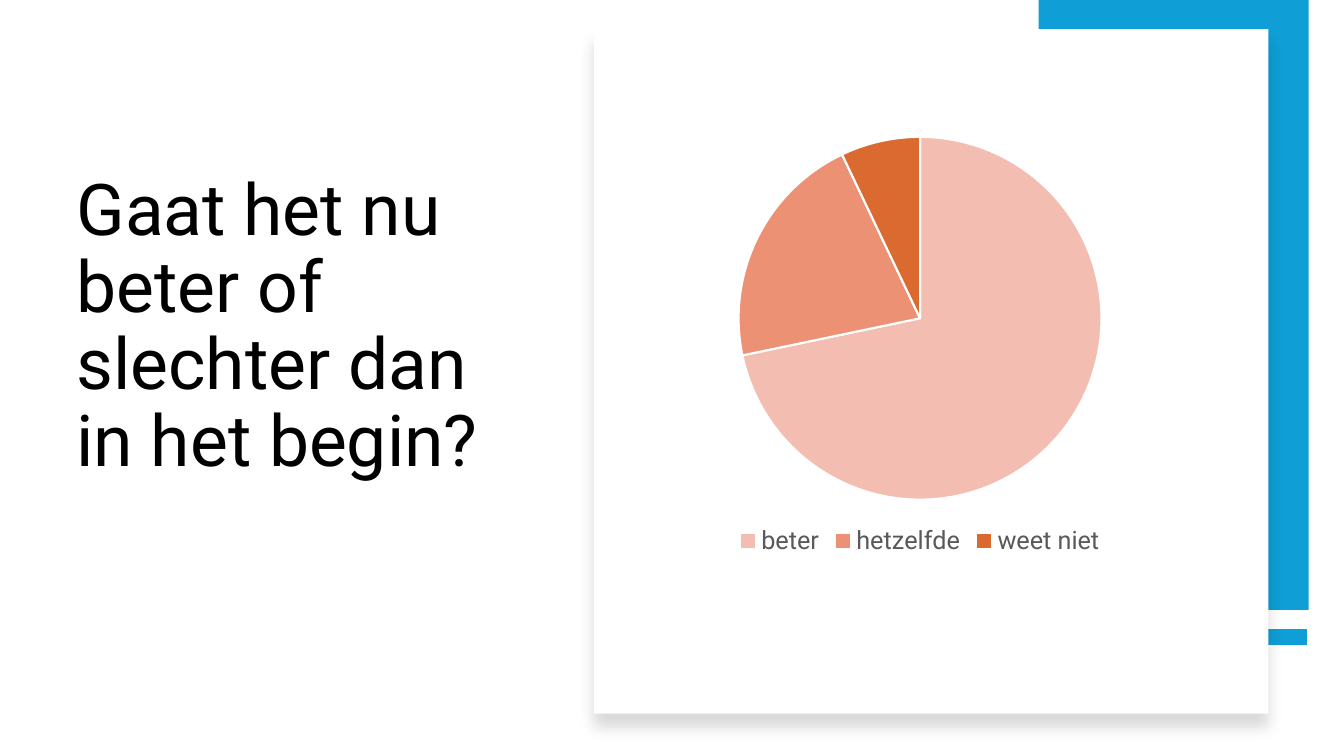
"""Build a slide with a question on the left and a pie chart card on the right."""
from lxml import etree
from pptx import Presentation
from pptx.chart.data import CategoryChartData
from pptx.dml.color import RGBColor
from pptx.enum.chart import XL_CHART_TYPE, XL_LEGEND_POSITION
from pptx.enum.shapes import MSO_CONNECTOR, MSO_SHAPE
from pptx.enum.text import MSO_ANCHOR
from pptx.oxml.ns import qn
from pptx.util import Inches, Pt

PIE = XL_CHART_TYPE.PIE
LEGEND_BOTTOM = XL_LEGEND_POSITION.BOTTOM
STRAIGHT = MSO_CONNECTOR.STRAIGHT
RECTANGLE = MSO_SHAPE.RECTANGLE
BOTTOM = MSO_ANCHOR.BOTTOM

FONT = "Roboto"
COLORS = {
    "text": "000000",
    "legend": "595959",
    "accent": "0F9ED5",
    "card": "FFFFFF",
    "shadow": "000000",
}
ANSWERS = [
    ("beter", 71, "F3BEB1"),
    ("hetzelfde", 21, "EC9173"),
    ("weet niet", 7, "DA6A2F"),
]


def rgb(name):
    """Return the named colour."""
    return RGBColor.from_string(COLORS[name])


def style_font(font, size, color):
    """Set the typeface, size and colour of a font."""
    font.name = FONT
    font.size = Pt(size)
    font.color.rgb = rgb(color)


def add_panel(page, box, color):
    """Add a plain filled rectangle."""
    panel = page.shapes.add_shape(RECTANGLE, *map(Inches, box))
    panel.shadow.inherit = False
    panel.fill.solid()
    panel.fill.fore_color.rgb = rgb(color)
    panel.line.fill.background()
    return panel


def add_question(page, box, question):
    """Add the question, resting on the bottom of its box."""
    title = page.shapes.add_textbox(*map(Inches, box))
    frame = title.text_frame
    frame.word_wrap = True
    frame.vertical_anchor = BOTTOM
    frame.text = question
    para = frame.paragraphs[0]
    para.line_spacing = 0.9
    style_font(para.runs[0].font, 51, "text")


def add_accent(page, box):
    """Add the blue block and the bar below it."""
    left, top, width, height = box
    bar_y = Inches(top + height + 0.27)
    bar = page.shapes.add_connector(
        STRAIGHT, Inches(left + width - 0.02), bar_y, Inches(left), bar_y
    )
    bar.line.color.rgb = rgb("accent")
    bar.line.width = Pt(12)
    etree.SubElement(bar._element.spPr, qn("a:effectLst"))
    add_panel(page, box, "accent")


def add_card(page, box):
    """Add the white card with a soft shadow below it."""
    card = add_panel(page, box, "card")
    effects = card._element.spPr.find(qn("a:effectLst"))
    shadow = etree.SubElement(
        effects, qn("a:outerShdw"), blurRad=str(Pt(11)), dist=str(Pt(10)),
        dir="5400000", algn="t", rotWithShape="0",
    )
    color = etree.SubElement(shadow, qn("a:srgbClr"), val=COLORS["shadow"])
    etree.SubElement(color, qn("a:alpha"), val="15000")


def add_answers(page, box):
    """Add the pie of answers with its legend."""
    data = CategoryChartData()
    data.categories = [label for label, _, _ in ANSWERS]
    data.add_series("Series 1", [value for _, value, _ in ANSWERS])
    chart = page.shapes.add_chart(PIE, *map(Inches, box), data).chart
    style_font(chart.font, 10, "text")
    chart.has_title = False
    chart.has_legend = True
    chart.legend.position = LEGEND_BOTTOM
    chart.legend.include_in_layout = False
    style_font(chart.legend.font, 18, "legend")
    plot = chart.plots[0]
    plot.vary_by_categories = True
    for index, (_, _, color) in enumerate(ANSWERS):
        slice_format = plot.series[0].points[index].format
        slice_format.fill.solid()
        slice_format.fill.fore_color.rgb = RGBColor.from_string(color)
        slice_format.line.color.rgb = rgb("card")
        slice_format.line.width = Pt(1.5)


def main():
    """Build and save the deck."""
    deck = Presentation()
    deck.slide_width = Inches(13.33)
    deck.slide_height = Inches(7.5)
    page = deck.slides.add_slide(deck.slide_layouts[6])
    add_question(
        page, (0.66, 0.74, 4.56, 4.09),
        "Gaat het nu beter of slechter dan in het begin?",
    )
    add_accent(page, (10.3, 0, 2.68, 6.05))
    add_card(page, (5.89, 0.29, 6.69, 6.79))
    add_answers(page, (6.39, 1.22, 5.47, 4.34))
    deck.save("out.pptx")


if __name__ == "__main__":
    main()
